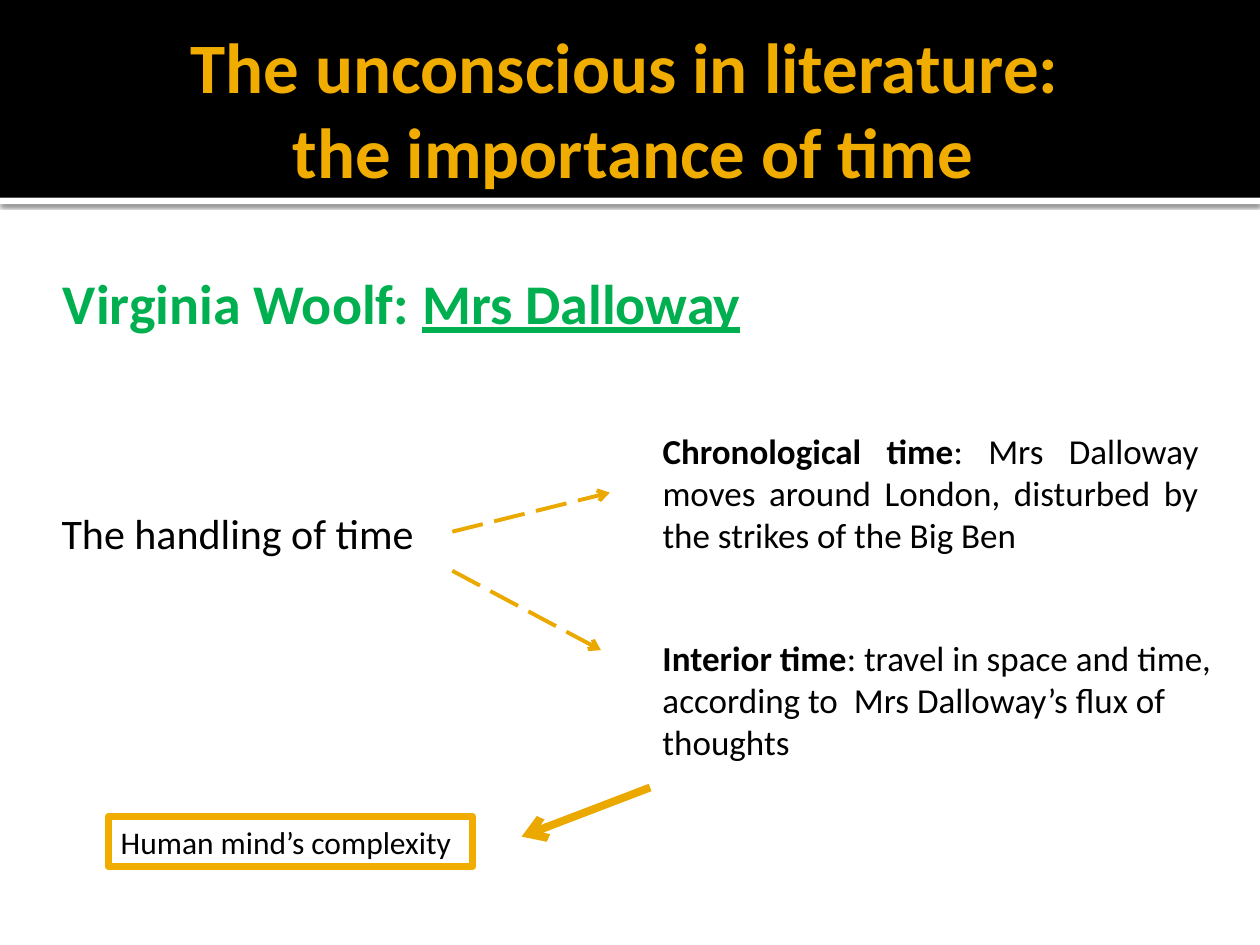
"""Build a slide on the handling of time in Mrs Dalloway."""
from lxml import etree
from pptx import Presentation
from pptx.dml.color import RGBColor
from pptx.enum.dml import MSO_LINE
from pptx.enum.shapes import MSO_CONNECTOR, MSO_SHAPE
from pptx.enum.text import MSO_ANCHOR, MSO_AUTO_SIZE, PP_ALIGN
from pptx.oxml import parse_xml
from pptx.oxml.ns import nsdecls, qn
from pptx.util import Inches, Pt

RECT, STRAIGHT = MSO_SHAPE.RECTANGLE, MSO_CONNECTOR.STRAIGHT
LEFT, CENTER, JUSTIFY = PP_ALIGN.LEFT, PP_ALIGN.CENTER, PP_ALIGN.JUSTIFY
TOP, MIDDLE = MSO_ANCHOR.TOP, MSO_ANCHOR.MIDDLE
LONG_DASH = MSO_LINE.LONG_DASH
FIXED, GROW = MSO_AUTO_SIZE.NONE, MSO_AUTO_SIZE.SHAPE_TO_FIT_TEXT
BLACK = RGBColor(0x00, 0x00, 0x00)
WHITE = RGBColor(0xFF, 0xFF, 0xFF)
GOLD = RGBColor(0xF0, 0xAD, 0x00)
AMBER = RGBColor(0xEB, 0xA9, 0x00)
GREEN = RGBColor(0x00, 0xB0, 0x50)
FONT = "Calibri"
WIDTH, HEIGHT = Inches(10), Inches(7.5)
COLS, ROWS = 100, 75


def grid(*values):
    """Turn alternating columns and rows into slide lengths."""
    units = (WIDTH / COLS, HEIGHT / ROWS)
    return [round(v * units[i % 2]) for i, v in enumerate(values)]


def style_run(r, size, color, bold=False, underline=None):
    """Format one run."""
    r.font.name = FONT
    r.font.size = Pt(size)
    r.font.color.rgb = color
    r.font.bold = bold
    r.font.underline = underline


def add_runs(p, runs, size, color):
    """Add (text, bold, underline) runs to a paragraph."""
    for text, bold, underline in runs:
        r = p.add_run()
        r.text = text
        style_run(r, size, color, bold, underline)


def place(sp, box, insets, anchor):
    """Move a placeholder and fix its text frame."""
    sp.left, sp.top, sp.width, sp.height = grid(*box)
    tf = sp.text_frame
    tf.word_wrap = True
    tf.auto_size = FIXED
    tf.vertical_anchor = anchor
    tf.margin_left, tf.margin_top, tf.margin_right, tf.margin_bottom = map(Inches, insets)
    return tf


def add_band(slide, box, color, position):
    """Add a plain header band behind the placeholders."""
    sp = slide.shapes.add_shape(RECT, *grid(*box))
    sp.shadow.inherit = False
    sp.fill.solid()
    sp.fill.fore_color.rgb = color
    sp.line.fill.background()
    slide.shapes._spTree.insert(position, sp._element)
    return sp


def add_soft_shadow(sp):
    """Drop a soft black shadow below a shape."""
    effects = sp._element.spPr.find(qn("a:effectLst"))
    effects.append(parse_xml(
        f'<a:outerShdw {nsdecls("a")} blurRad="{Pt(2.5)}" dist="{Pt(0.8)}" dir="5400000"'
        ' algn="t" rotWithShape="0"><a:srgbClr val="000000"><a:alpha val="60000"/>'
        '</a:srgbClr></a:outerShdw>'))


def set_title(slide, text):
    """Fill the title placeholder."""
    tf = place(slide.shapes.title, (5, 1.7, 90, 13.7), (0.1, 0.05, 0.05, 0.05), MIDDLE)
    tf.text = text
    p = tf.paragraphs[0]
    p.alignment = CENTER
    for r in p.runs:
        style_run(r, 40.5, GOLD, True)


def set_heading(slide, runs):
    """Fill the body placeholder with an unbulleted heading."""
    tf = place(slide.placeholders[1], (3.1, 20.3, 72.7, 6.7), (0.06, 0.1, 0.1, 0.05), TOP)
    p = tf.paragraphs[0]
    pPr = p._p.get_or_add_pPr()
    pPr.set("marL", str(Inches(0.48)))
    pPr.set("indent", str(Inches(-0.35)))
    etree.SubElement(pPr, qn("a:buNone"))
    p.space_before = Pt(0)
    add_runs(p, runs, 32, GREEN)


def add_text(slide, box, runs, size, align=LEFT):
    """Add a wrapping text box."""
    sp = slide.shapes.add_textbox(*grid(*box))
    tf = sp.text_frame
    tf.word_wrap = True
    tf.auto_size = GROW
    p = tf.paragraphs[0]
    p.alignment = align
    add_runs(p, runs, size, BLACK)
    return sp


def add_framed_text(slide, box, runs, size):
    """Add a white text box with a gold frame."""
    sp = add_text(slide, box, runs, size)
    sp.fill.solid()
    sp.fill.fore_color.rgb = WHITE
    sp.line.color.rgb = GOLD
    sp.line.width = Pt(3.78)


def add_arrow(slide, ends, width, dash=None):
    """Add a straight amber arrow."""
    line = slide.shapes.add_connector(STRAIGHT, *grid(*ends))
    line.line.color.rgb = AMBER
    line.line.width = Pt(width)
    if dash:
        line.line.dash_style = dash
    spPr = line._element.spPr
    etree.SubElement(spPr.find(qn("a:ln")), qn("a:tailEnd"), type="arrow")
    etree.SubElement(spPr, qn("a:effectLst"))


def main():
    """Build and save the slide."""
    prs = Presentation()
    prs.slide_width, prs.slide_height = WIDTH, HEIGHT
    slide = prs.slides.add_slide(prs.slide_layouts[1])

    add_soft_shadow(add_band(slide, (0, 15.7, COLS, 0.5), WHITE, 2))
    add_band(slide, (0, 0, COLS, 15.7), BLACK, 3)
    set_title(slide, "The unconscious in literature: \vthe importance of time")
    set_heading(slide, [("Virginia Woolf: ", True, None),
                        ("Mrs Dalloway", True, True), (" ", True, False)])

    add_text(slide, (3.9, 39.8, 36.7, 5), [("The handling of time", False, None)], 24)
    add_text(slide, (51.6, 33.6, 44.5, 11.1), [
        ("Chronological time", True, None),
        (": Mrs Dalloway moves around London, disturbed by the strikes of the Big Ben",
         False, None)], 20, JUSTIFY)
    add_text(slide, (51.6, 50, 48.4, 11.1), [
        ("Interior time", True, None),
        (": travel in space and time, according to  Mrs Dalloway’s flux of thoughts",
         False, None)], 20)
    add_framed_text(slide, (8.6, 64.8, 28.9, 4),
                    [("Human mind’s complexity", False, None)], 18)

    add_arrow(slide, (51.6, 62.5, 41.4, 66.4), 4.5)
    add_arrow(slide, (35.9, 42.2, 48.4, 39.1), 2.25, LONG_DASH)
    add_arrow(slide, (35.9, 45.3, 47.7, 51.6), 2.25, LONG_DASH)
    prs.save("out.pptx")


if __name__ == "__main__":
    main()
